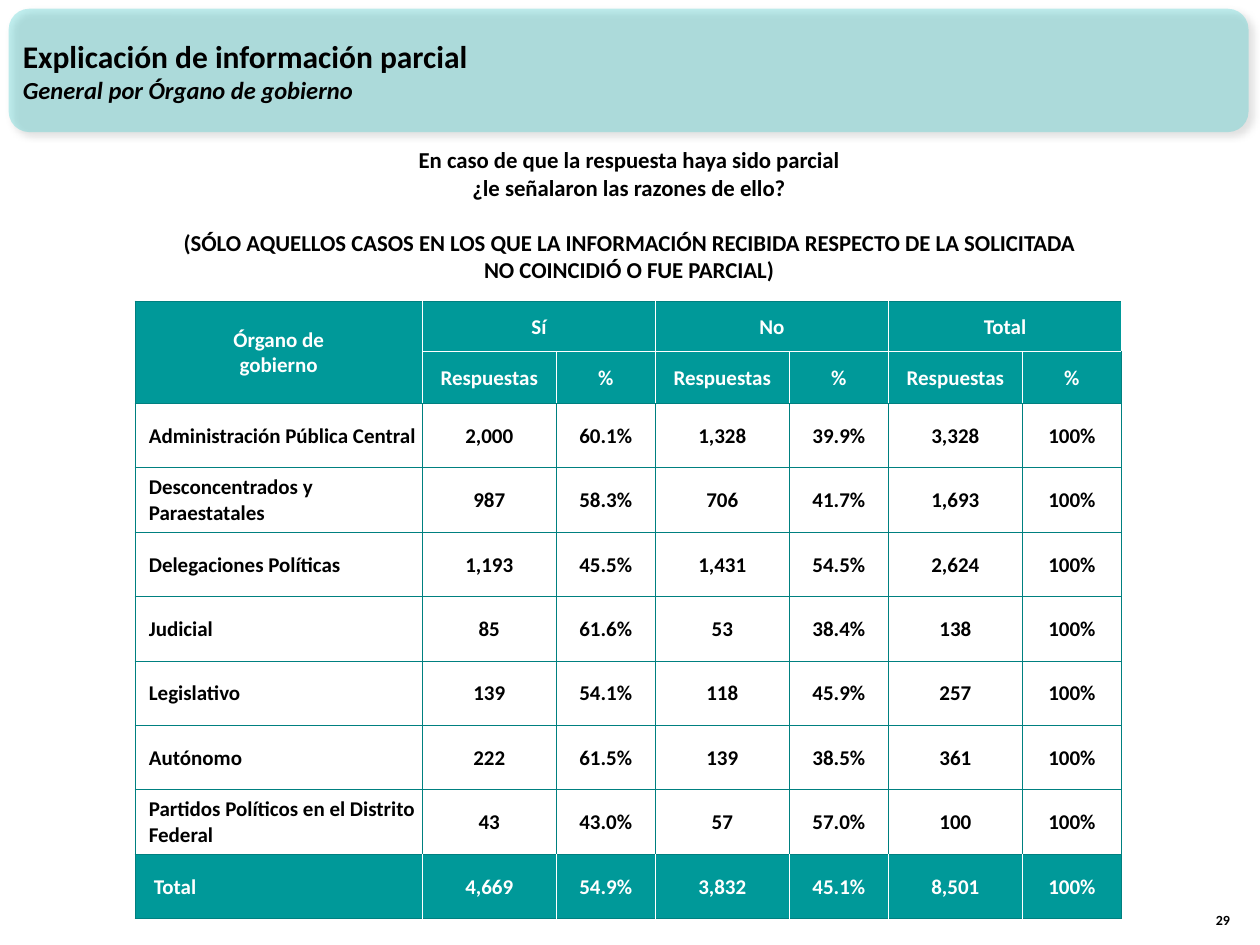
import pptx
import pptx.util
import pptx.dml.color
import pptx.enum.shapes
import pptx.enum.text
import pptx.oxml
import pptx.oxml.ns
from lxml import etree

Pt = pptx.util.Pt
ALIGN = pptx.enum.text.PP_ALIGN
ANCHOR = pptx.enum.text.MSO_ANCHOR

COLORS = {"black": "000000", "white": "FFFFFF", "banner": "33CCCC",
          "header": "009999", "border": "008080"}
FONT = "Calibri"

TITLE = [("Explicación de información parcial", {"size": Pt(18)}),
         ("General por Órgano de gobierno", {"size": Pt(14), "italic": True})]
QUESTION = ["En caso de que la respuesta haya sido parcial",
            "¿le señalaron las razones de ello?",
            "(SÓLO AQUELLOS CASOS EN LOS QUE LA INFORMACIÓN RECIBIDA RESPECTO "
            "DE LA SOLICITADA NO COINCIDIÓ O FUE PARCIAL)"]
PAGE_NUMBER = "29"
GROUPS = ["Sí", "No", "Total"]
MEASURES = ["Respuestas", "%"]
ROWS = [
    ("Administración Pública Central", "2,000", "60.1%", "1,328", "39.9%", "3,328", "100%"),
    ("Desconcentrados y Paraestatales", "987", "58.3%", "706", "41.7%", "1,693", "100%"),
    ("Delegaciones Políticas", "1,193", "45.5%", "1,431", "54.5%", "2,624", "100%"),
    ("Judicial", "85", "61.6%", "53", "38.4%", "138", "100%"),
    ("Legislativo", "139", "54.1%", "118", "45.9%", "257", "100%"),
    ("Autónomo", "222", "61.5%", "139", "38.5%", "361", "100%"),
    ("Partidos Políticos en el Distrito Federal", "43", "43.0%", "57", "57.0%", "100", "100%"),
    ("Total", "4,669", "54.9%", "3,832", "45.1%", "8,501", "100%"),
]
HEADER = [["Órgano de\ngobierno"] + [text for group in GROUPS for text in (group, "")],
          [""] + MEASURES * len(GROUPS)]
GRID = HEADER + ROWS
WIDTHS = [164.2] + [76.4, 56.8] * len(GROUPS)
HEIGHTS = [29] * len(HEADER) + [36.8] * len(ROWS)


def color(name):
    return pptx.dml.color.RGBColor.from_string(COLORS[name])


def assign(target, values):
    for name, value in values.items():
        setattr(target, name, value)


def write(para, text, shade="black", align=ALIGN.LEFT, **font):
    para.alignment = align
    span = para.add_run()
    span.text = text
    assign(span.font, {"name": FONT, "bold": True, **font})
    span.font.color.rgb = color(shade)


def paragraphs(frame, count):
    return [frame.paragraphs[0]] + [frame.add_paragraph() for _ in range(count - 1)]


def place(box, left, top, width, height):
    assign(box, {"left": Pt(left), "top": Pt(top), "width": Pt(width), "height": Pt(height)})


def add_banner(page):
    banner = page.shapes.add_shape(pptx.enum.shapes.MSO_SHAPE.ROUNDED_RECTANGLE,
                                   Pt(5), Pt(5), Pt(708.5), Pt(70.5))
    banner.fill.solid()
    banner.fill.fore_color.rgb = color("banner")
    banner.line.fill.background()
    properties = banner._element.spPr
    tint = properties.find(".//" + pptx.oxml.ns.qn("a:srgbClr"))
    etree.SubElement(tint, pptx.oxml.ns.qn("a:alpha"), val="30000")
    properties.append(pptx.oxml.parse_xml(
        f'<a:effectLst {pptx.oxml.ns.nsdecls("a")}>'
        f'<a:outerShdw blurRad="{Pt(4)}" dist="{Pt(3)}" dir="2700000" algn="tl" rotWithShape="0">'
        f'<a:srgbClr val="{COLORS["black"]}"><a:alpha val="40000"/></a:srgbClr>'
        '</a:outerShdw></a:effectLst>'))


def add_title(page):
    title = page.shapes.title
    page.shapes._spTree.append(title._element)
    place(title, 5.8, 6.5, 660, 67.7)
    frame = title.text_frame
    assign(frame, {"word_wrap": True, "vertical_anchor": ANCHOR.MIDDLE,
                   "auto_size": pptx.enum.text.MSO_AUTO_SIZE.NONE})
    for para, (text, font) in zip(paragraphs(frame, len(TITLE)), TITLE):
        write(para, text, **font)


def set_borders(cell, sides):
    properties = cell._tc.get_or_add_tcPr()
    for index, (side, shade) in enumerate(sides.items()):
        properties.insert(index, pptx.oxml.parse_xml(
            f'<a:ln{side} {pptx.oxml.ns.nsdecls("a")} w="{Pt(0.5)}">'
            f'<a:solidFill><a:srgbClr val="{COLORS[shade]}"/></a:solidFill></a:ln{side}>'))


def format_cell(cell, row, column):
    last = len(GRID) - 1
    filled = row < len(HEADER) or row == last
    if filled:
        cell.fill.solid()
        cell.fill.fore_color.rgb = color("header")
    else:
        cell.fill.background()
    assign(cell, {"margin_left": Pt(0.7), "margin_right": Pt(0.7), "margin_top": Pt(0.7),
                  "margin_bottom": Pt(0), "vertical_anchor": ANCHOR.MIDDLE})
    white_sides = {"L": filled and column > 0,
                   "R": filled and column < len(WIDTHS) - 1,
                   "T": row == 1 and column > 0,
                   "B": row == 0 and column > 0}
    set_borders(cell, {side: "white" if white else "border"
                       for side, white in white_sides.items()})
    label = column == 0 and row >= len(HEADER)
    lines = GRID[row][column].split("\n") if GRID[row][column] else []
    for para, text in zip(paragraphs(cell.text_frame, max(1, len(lines))), lines):
        if label:
            indent = 10 if row == last else 7.2
            para._p.get_or_add_pPr().set("marL", str(Pt(indent)))
        write(para, text, "white" if filled else "black",
              ALIGN.LEFT if label else ALIGN.CENTER, size=Pt(12))


def add_results(page):
    table = page.shapes.add_table(len(GRID), len(WIDTHS), Pt(77.2), Pt(172),
                                  Pt(sum(WIDTHS)), Pt(sum(HEIGHTS))).table
    assign(table, {"first_row": False, "horz_banding": False})
    for column, width in zip(table.columns, WIDTHS):
        column.width = Pt(width)
    for row, height in zip(table.rows, HEIGHTS):
        row.height = Pt(height)
    for row in range(len(GRID)):
        for column in range(len(WIDTHS)):
            format_cell(table.cell(row, column), row, column)
    table.cell(0, 0).merge(table.cell(1, 0))
    for column in range(1, len(WIDTHS), len(MEASURES)):
        table.cell(0, column).merge(table.cell(0, column + 1))


def add_text(page, bounds, lines, anchor, align, size):
    box = page.shapes.add_textbox(*map(Pt, bounds))
    assign(box.text_frame, {"word_wrap": True, "vertical_anchor": anchor})
    paras = paragraphs(box.text_frame, len(lines))
    for para, text in zip(paras, lines):
        write(para, text, align=align, size=Pt(size))
    return paras


def main():
    deck = pptx.Presentation()
    assign(deck, {"slide_width": Pt(720), "slide_height": Pt(540)})
    page = deck.slides.add_slide(deck.slide_layouts[5])
    add_banner(page)
    add_title(page)
    add_text(page, (681, 504.7, 29, 29), [PAGE_NUMBER], ANCHOR.BOTTOM, ALIGN.RIGHT, 8)
    add_results(page)
    question = add_text(page, (92.2, 80, 534.2, 85.7), QUESTION, ANCHOR.TOP, ALIGN.CENTER, 13)
    question[-1].space_before = Pt(15.8)
    deck.save("out.pptx")


if __name__ == "__main__":
    main()
